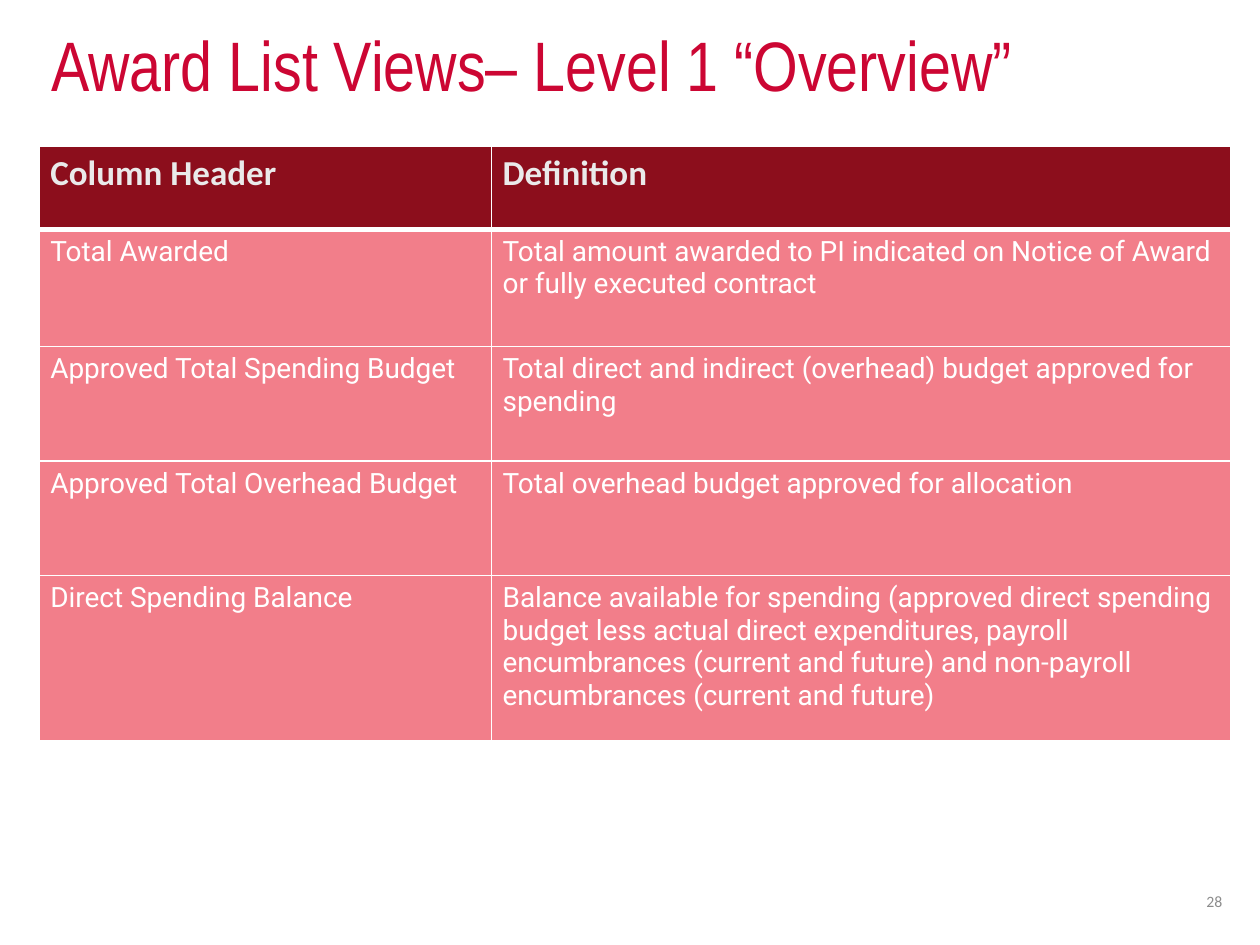
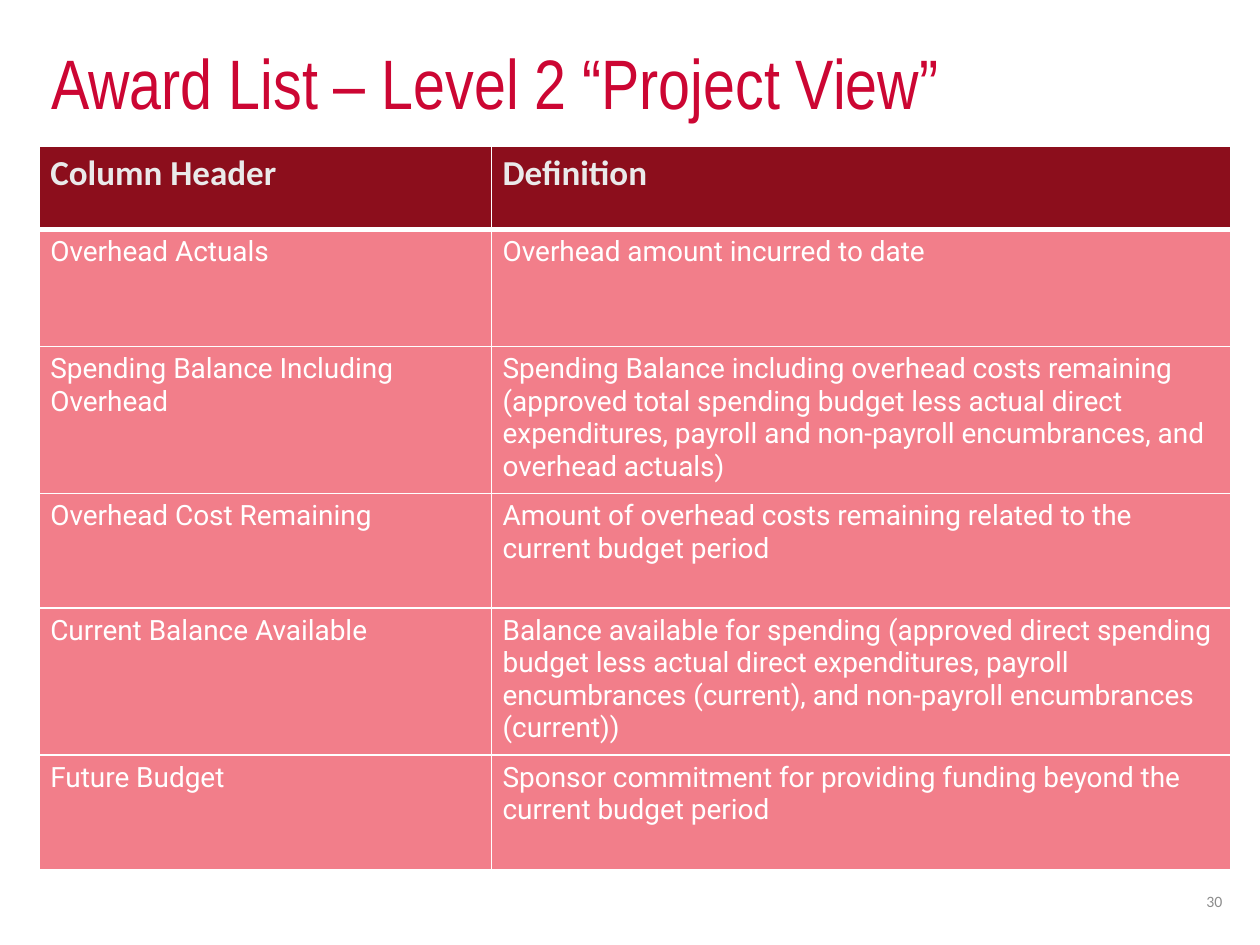
from lxml import etree
from pptx import Presentation
from pptx.dml.color import RGBColor
from pptx.enum import text
from pptx.oxml import ns
from pptx.util import Inches, Pt

TITLE_RED = RGBColor(0xCC, 0x06, 0x33)
HEADER_RED = RGBColor(0x8C, 0x0E, 0x1C)
ROW_PINK = RGBColor(0xF2, 0x7E, 0x8A)
HEADER_GREY = RGBColor(0xEA, 0xEA, 0xEA)
NUMBER_GREY = RGBColor(0x8C, 0x8C, 0x8C)
WHITE = RGBColor(0xFF, 0xFF, 0xFF)

LEFT = 0.31
COLUMN_WIDTHS = (3.59, 5.87)
HEADINGS = ("Column Header", "Definition")
HEADER_HEIGHT = 0.66

# Each row: height, column header, definition
OVERVIEW_ROWS = [
    (0.93, "Total Awarded",
     "Total amount awarded to PI indicated on Notice of Award "
     "or fully executed contract"),
    (0.91, "Approved Total Spending Budget",
     "Total direct and indirect (overhead) budget approved for spending"),
    (0.91, "Approved Total Overhead Budget",
     "Total overhead budget approved for allocation"),
    (1.31, "Direct Spending Balance",
     "Balance available for spending (approved direct spending budget less "
     "actual direct expenditures, payroll encumbrances (current and future) "
     "and non-payroll encumbrances (current and future)"),
]
PROJECT_ROWS = [
    (0.93, "Overhead Actuals", "Overhead amount incurred to date"),
    (0.91, "Spending Balance Including Overhead",
     "Spending Balance including overhead costs remaining (approved total "
     "spending budget less actual direct expenditures, payroll and "
     "non-payroll encumbrances, and overhead actuals)"),
    (0.91, "Overhead Cost Remaining",
     "Amount of overhead costs remaining related to the current budget period"),
    (0.91, "Current Balance Available",
     "Balance available for spending (approved direct spending budget less "
     "actual direct expenditures, payroll encumbrances (current), and "
     "non-payroll encumbrances (current))"),
    (0.91, "Future Budget",
     "Sponsor commitment for providing funding beyond the current budget period"),
]


def style_paragraph(paragraph, font_name, size, color, bold=False):
    font = paragraph.font
    font.name, font.size, font.bold = font_name, Pt(size), bold
    font.color.rgb = color


def add_label(slide, wording, left, top, width, height):
    """Add a vertically centred text box and return its paragraph."""
    box = slide.shapes.add_textbox(*map(Inches, (left, top, width, height)))
    box.text_frame.word_wrap = True
    box.text_frame.vertical_anchor = text.MSO_ANCHOR.MIDDLE
    paragraph = box.text_frame.paragraphs[0]
    paragraph.text = wording
    return paragraph


def add_title(slide, wording, top):
    title = add_label(slide, wording, LEFT, top, 8.62, 0.66)
    title.line_spacing = 0.9
    style_paragraph(title, "Arial Narrow", 40, TITLE_RED)


def add_page_number(slide, number):
    page = add_label(slide, str(number), 9.45, 6.95, 0.35, 0.4)
    page.alignment = text.PP_ALIGN.RIGHT
    style_paragraph(page, "Calibri", 9, NUMBER_GREY)


def add_borders(cell, **widths):
    """Draw white cell borders; widths in points, keyed L, R, T, B in that order."""
    properties = cell._tc.get_or_add_tcPr()
    for side, width in widths.items():
        line = etree.SubElement(properties, ns.qn(f"a:ln{side}"), w=str(Pt(width)))
        fill = etree.SubElement(line, ns.qn("a:solidFill"))
        etree.SubElement(fill, ns.qn("a:srgbClr"), val=str(WHITE))


def fill_cell(cell, wording, is_header, top_border):
    cell.text = wording
    cell.margin_left = cell.margin_right = Inches(0.09)
    cell.margin_top = cell.margin_bottom = Inches(0.05)
    add_borders(cell, L=1, R=1, T=top_border, B=3 if is_header else 1)
    cell.fill.solid()
    cell.fill.fore_color.rgb = HEADER_RED if is_header else ROW_PINK
    paragraph = cell.text_frame.paragraphs[0]
    if is_header:
        style_paragraph(paragraph, "Calibri", 20, HEADER_GREY, bold=True)
    else:
        style_paragraph(paragraph, "Roboto", 16, WHITE)


def add_definitions(slide, definitions):
    rows = [(HEADER_HEIGHT, *HEADINGS), *definitions]
    size = sum(COLUMN_WIDTHS), sum(height for height, *_ in rows)
    table = slide.shapes.add_table(
        len(rows), len(COLUMN_WIDTHS), *map(Inches, (LEFT, 1.16, *size))).table
    table.horz_banding = False
    for column, width in zip(table.columns, COLUMN_WIDTHS):
        column.width = Inches(width)
    for index, (height, *wordings) in enumerate(rows):
        table.rows[index].height = Inches(height)
        for cell, wording in zip(table.rows[index].cells, wordings):
            fill_cell(cell, wording, index == 0, 3 if index == 1 else 1)


def add_view_slide(deck, title, title_top, definitions, number):
    slide = deck.slides.add_slide(deck.slide_layouts[6])
    add_title(slide, title, title_top)
    add_definitions(slide, definitions)
    add_page_number(slide, number)


def main():
    deck = Presentation()
    deck.slide_width, deck.slide_height = Inches(10), Inches(7.5)
    add_view_slide(deck, "Award List Views– Level 1 “Overview”", 0.22,
                   OVERVIEW_ROWS, 28)
    add_view_slide(deck, "Award List – Level 2 “Project View”", 0.36,
                   PROJECT_ROWS, 30)
    deck.save("out.pptx")


if __name__ == "__main__":
    main()
